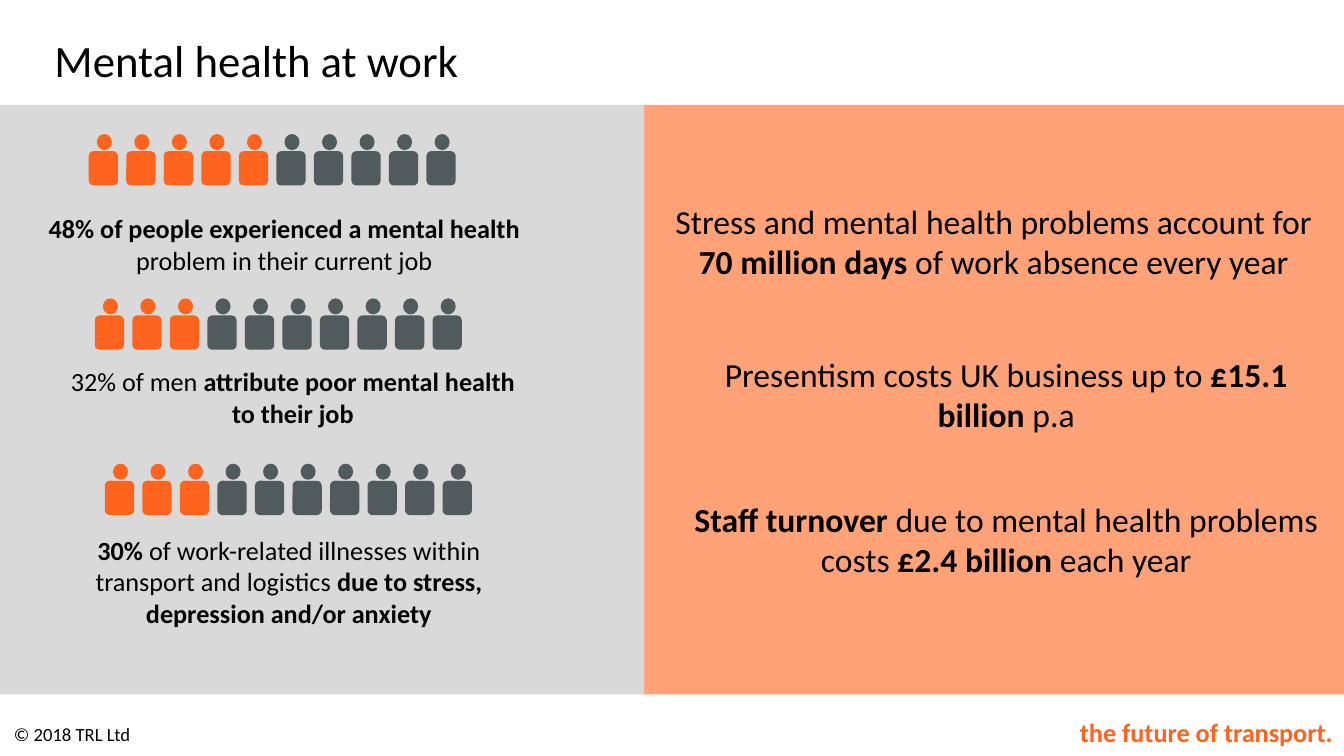
from pptx import Presentation
from pptx.dml.color import RGBColor
from pptx.enum.shapes import MSO_SHAPE as Preset
from pptx.enum.text import MSO_ANCHOR as Anchor, MSO_AUTO_SIZE as AutoSize, PP_ALIGN as Align
from pptx.util import Pt

EMU_PER_PX = 9144  # 100 px to the inch
SLIDE_SIZE = (1333, 750)
TITLE_ONLY = 5
FONT = "Calibri"
COLORS = {
    "text": "000000",
    "highlight": "FF641E",
    "remainder": "515B5E",
    "survey": "D9D9D9",
    "costs": "FFA278",
}
PEOPLE = 10

# Panel entries hold the box relative to the panel; ** marks bold text.
PEOPLE_ROWS = [
    ((92, 29, 364, 51), 5),
    ((98, 192, 364, 51), 3),
    ((108, 356, 364, 51), 3),
]
SURVEY_FINDINGS = [
    ((39, 102, 494, 73),
     "**48% of people experienced a mental health **problem in their current job"),
    ((55, 254, 479, 73),
     "32% of men **attribute poor mental health to their job**"),
    ((48, 421, 485, 131),
     "**30%** of work-related illnesses within transport and logistics "
     "**due to stress, depression and/or anxiety**"),
]
COST_FINDINGS = [
    ((15, 90, 667, 91),
     "Stress and mental health problems account for **70 million days **"
     "of work absence every year"),
    ((41, 242, 640, 91),
     "Presentism costs UK business up to **£15.1 billion **p.a"),
    ((41, 386, 640, 91),
     "**Staff turnover **due to mental health problems costs **£2.4 billion **each year"),
]


def px(length):
    return round(length * EMU_PER_PX)


def emu_box(box):
    return [px(length) for length in box]


def inside(outer, inner):
    """Shift a box given relative to outer into slide coordinates."""
    return (outer[0] + inner[0], outer[1] + inner[1], *inner[2:])


def write(frame, marked_text, size, color="text", align=Align.LEFT, anchor=Anchor.TOP):
    """Fill a text frame; every second piece between ** marks is bold."""
    frame.word_wrap = True
    frame.auto_size = AutoSize.NONE
    frame.vertical_anchor = anchor
    paragraph = frame.paragraphs[0]
    paragraph.alignment = align
    for index, words in enumerate(marked_text.split("**")):
        if not words:
            continue
        run = paragraph.add_run()
        run.text = words
        run.font.name = FONT
        run.font.size = Pt(size)
        run.font.bold = index % 2 == 1
        run.font.color.rgb = RGBColor.from_string(COLORS[color])


def add_text(shapes, box, marked_text, size, **style):
    write(shapes.add_textbox(*emu_box(box)).text_frame, marked_text, size, **style)


def add_filled(shapes, preset, box, color):
    shape = shapes.add_shape(preset, *emu_box(box))
    shape.shadow.inherit = False
    shape.fill.solid()
    shape.fill.fore_color.rgb = RGBColor.from_string(COLORS[color])
    shape.line.fill.background()


def add_person(shapes, box, color):
    left, top, width, height = box
    add_filled(shapes, Preset.OVAL, (left + 8, top, 15, 16), color)
    add_filled(shapes, Preset.ROUNDED_RECTANGLE, (left, top + 17, width, height - 17), color)


def add_people_row(shapes, box, highlighted):
    left, top, width, height = box
    person_width = 29
    pitch = (width - person_width) / (PEOPLE - 1)
    row = shapes.add_group_shape()
    for index in range(PEOPLE):
        color = "highlight" if index < highlighted else "remainder"
        add_person(row.shapes, (left + index * pitch, top, person_width, height), color)


def add_findings_panel(shapes, box, color, findings, size):
    add_filled(shapes, Preset.RECTANGLE, box, color)
    for finding_box, finding in findings:
        add_text(shapes, inside(box, finding_box), finding, size, align=Align.CENTER)


def add_survey_panel(shapes, box):
    add_findings_panel(shapes, box, "survey", SURVEY_FINDINGS, 18.7)
    for row_box, highlighted in PEOPLE_ROWS:
        add_people_row(shapes, inside(box, row_box), highlighted)


def place_title(title, box):
    title.left, title.top, title.width, title.height = emu_box(box)
    write(title.text_frame, "Mental health at work", 32, anchor=Anchor.MIDDLE)


def add_footer(shapes, box):
    add_text(shapes, inside(box, (4, 6, 218, 33)), "© 2018 TRL Ltd", 13.3,
             anchor=Anchor.MIDDLE)
    add_text(shapes, inside(box, (1042, 0, 290, 42)), "**the future of transport.**", 18.7,
             color="highlight", align=Align.RIGHT)


def main():
    deck = Presentation()
    deck.slide_width, deck.slide_height = emu_box(SLIDE_SIZE)
    shapes = deck.slides.add_slide(deck.slide_layouts[TITLE_ONLY]).shapes
    place_title(shapes.title, (44, 14, 998, 90))
    add_findings_panel(shapes, (637, 104, 696, 585), "costs", COST_FINDINGS, 24)
    add_survey_panel(shapes, (-4, 104, 643, 585))
    add_footer(shapes, (0, 706, 1333, 44))
    deck.save("out.pptx")


if __name__ == "__main__":
    main()
